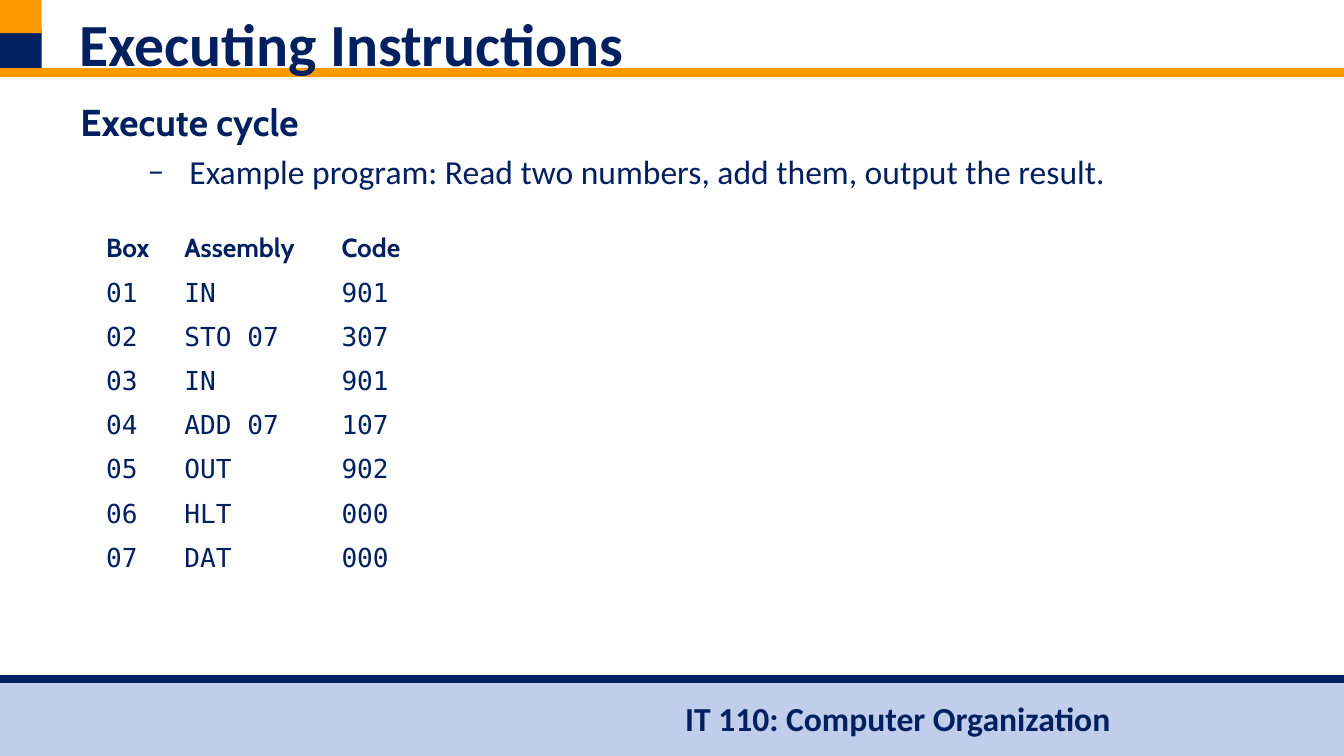
from dataclasses import dataclass

from lxml.etree import SubElement
from pptx import Presentation
from pptx.dml.color import RGBColor
from pptx.enum.shapes import MSO_CONNECTOR, MSO_SHAPE
from pptx.enum.text import MSO_ANCHOR, MSO_AUTO_SIZE, PP_ALIGN
from pptx.oxml.ns import qn
from pptx.slide import Slide
from pptx.util import Cm, Pt

NAVY = "002060"
ORANGE = "FF9900"
PALE_BLUE = "C0CDEB"
WHITE = "FFFFFF"
PAGE_WIDTH = 25.4
PAGE_HEIGHT = 14.29


@dataclass(frozen=True)
class Area:
    left: float
    top: float
    width: float
    height: float

    def lengths(self) -> tuple:
        return Cm(self.left), Cm(self.top), Cm(self.width), Cm(self.height)


@dataclass(frozen=True)
class Style:
    size: float
    font: str = "Calibri"
    bold: bool = True


@dataclass(frozen=True)
class Band:
    area: Area
    color: str


@dataclass(frozen=True)
class Rule:
    top: float
    color: str


BANDS = [
    Band(Area(0, 12.85, PAGE_WIDTH, 1.44), PALE_BLUE),
    Band(Area(0, 0.56, 0.79, 0.81), NAVY),
    Band(Area(0, 0, 0.79, 0.63), ORANGE),
]
RULES = [Rule(1.37, ORANGE), Rule(12.83, NAVY)]

HEADING = Style(20, "Cabin")
DETAIL = Style(18, bold=False)
TABLE_HEADER = Style(14, "Cabin")
TABLE_CODE = Style(14, "DejaVu Sans Mono", False)

PROGRAM = [
    ("Box", "Assembly", "Code"),
    ("01", "IN", "901"),
    ("02", "STO 07", "307"),
    ("03", "IN", "901"),
    ("04", "ADD 07", "107"),
    ("05", "OUT", "902"),
    ("06", "HLT", "000"),
    ("07", "DAT", "000"),
]
COLUMN_WIDTHS = [1.48, 2.97, 1.8]
ROW_HEIGHT = 0.83


def color_of(value: str) -> RGBColor:
    return RGBColor.from_string(value)


def add_text(para, text: str, style: Style) -> None:
    span = para.add_run()
    span.text = text
    span.font.size = Pt(style.size)
    span.font.name = style.font
    span.font.bold = style.bold
    span.font.color.rgb = color_of(NAVY)


def add_text_frame(page: Slide, area: Area):
    frame = page.shapes.add_textbox(*area.lengths()).text_frame
    frame.word_wrap = True
    return frame


def draw_band(page: Slide, band: Band) -> None:
    box = page.shapes.add_shape(MSO_SHAPE.RECTANGLE, *band.area.lengths())
    box.shadow.inherit = False
    box.fill.solid()
    box.fill.fore_color.rgb = color_of(band.color)
    box.line.fill.background()


def draw_rule(page: Slide, rule: Rule) -> None:
    line = page.shapes.add_connector(
        MSO_CONNECTOR.STRAIGHT, Cm(0), Cm(rule.top), Cm(PAGE_WIDTH), Cm(rule.top)
    )
    line.line.color.rgb = color_of(rule.color)
    line.line.width = Pt(4.5)
    SubElement(line._element.spPr, qn("a:effectLst"))


def set_dash_bullet(para) -> None:
    properties = para._p.get_or_add_pPr()
    properties.set("marL", str(Cm(2.06)))
    properties.set("indent", str(-Cm(0.79)))
    bullet_color = SubElement(properties, qn("a:buClr"))
    SubElement(bullet_color, qn("a:srgbClr"), val=NAVY)
    SubElement(properties, qn("a:buFont"), typeface="Calibri")
    SubElement(properties, qn("a:buChar"), char="–")


def draw_title(page: Slide) -> None:
    title = page.shapes.title
    title.left, title.top, title.width, title.height = Area(1.24, 0, 22.91, 1.35).lengths()
    frame = title.text_frame
    frame.word_wrap = True
    frame.auto_size = MSO_AUTO_SIZE.NONE
    frame.vertical_anchor = MSO_ANCHOR.TOP
    para = frame.paragraphs[0]
    para.alignment = PP_ALIGN.LEFT
    add_text(para, "Executing Instructions", Style(32))
    page.shapes._spTree.append(title._element)


def draw_body(page: Slide) -> None:
    frame = add_text_frame(page, Area(1.27, 1.75, 22.86, 9.42))
    add_text(frame.paragraphs[0], "Execute cycle", HEADING)
    para = frame.add_paragraph()
    para.level = 1
    para.space_before = Pt(3.6)
    set_dash_bullet(para)
    add_text(para, "Example program: Read two numbers, add them, output the result.", DETAIL)


def set_cell_borders(cell, bottom_width: float) -> None:
    properties = cell._tc.get_or_add_tcPr()
    widths = {"a:lnL": 1, "a:lnR": 1, "a:lnT": 1, "a:lnB": bottom_width}
    for index, (side, width) in enumerate(widths.items()):
        border = SubElement(properties, qn(side), w=str(Pt(width)))
        fill = SubElement(border, qn("a:solidFill"))
        SubElement(fill, qn("a:srgbClr"), val=WHITE)
        properties.insert(index, border)


def draw_program_table(page: Slide) -> None:
    area = Area(1.75, 4.27, sum(COLUMN_WIDTHS), ROW_HEIGHT * len(PROGRAM))
    table = page.shapes.add_table(
        len(PROGRAM), len(COLUMN_WIDTHS), *area.lengths()
    ).table
    table.horz_banding = False
    for column, width in zip(table.columns, COLUMN_WIDTHS):
        column.width = Cm(width)
    for row_index, values in enumerate(PROGRAM):
        table.rows[row_index].height = Cm(ROW_HEIGHT)
        is_header = row_index == 0
        for column_index, value in enumerate(values):
            cell = table.cell(row_index, column_index)
            cell.fill.solid()
            cell.fill.fore_color.rgb = color_of(WHITE)
            set_cell_borders(cell, 3 if is_header else 1)
            style = TABLE_HEADER if is_header else TABLE_CODE
            add_text(cell.text_frame.paragraphs[0], value, style)


def main() -> None:
    deck = Presentation()
    deck.slide_width = Cm(PAGE_WIDTH)
    deck.slide_height = Cm(PAGE_HEIGHT)
    page = deck.slides.add_slide(deck.slide_layouts.get_by_name("Title Only"))
    for band in BANDS:
        draw_band(page, band)
    for rule in RULES:
        draw_rule(page, rule)
    footer = add_text_frame(page, Area(12.7, 13.06, 8.61, 1.02))
    add_text(footer.paragraphs[0], "IT 110: Computer Organization", Style(18))
    draw_body(page)
    draw_title(page)
    draw_program_table(page)
    deck.save("out.pptx")


if __name__ == "__main__":
    main()
